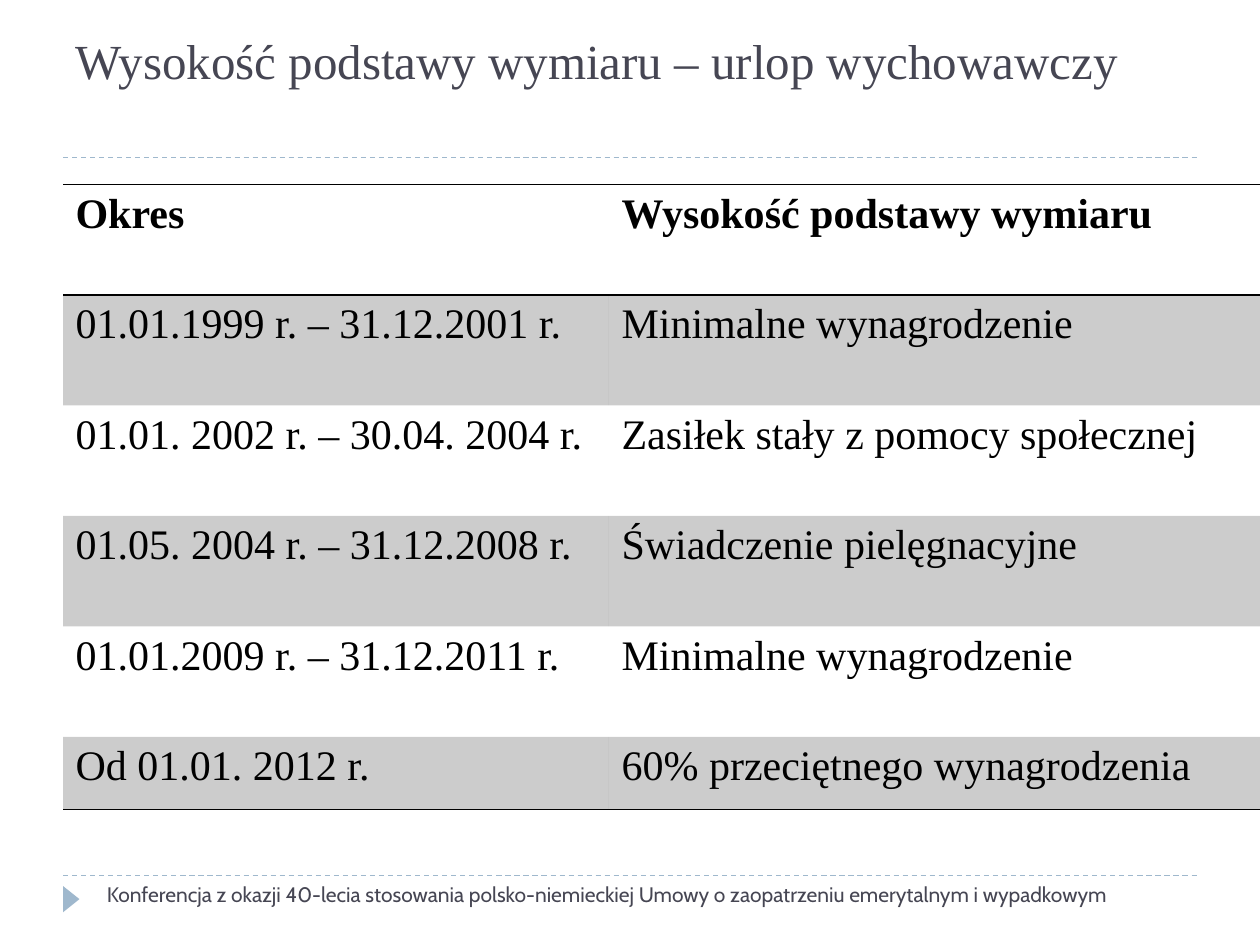
from dataclasses import dataclass

from lxml import etree
from pptx import Presentation
from pptx.dml.color import RGBColor
from pptx.enum import dml, shapes, text
from pptx.oxml import ns
from pptx.util import Pt


@dataclass(frozen=True)
class Theme:
    """Colours, fonts and type sizes of the slide."""
    ink: str = "000000"
    muted: str = "464653"
    accent: str = "9FB8CD"
    serif: str = "Times New Roman"
    sans: str = "Cabin"
    title: int = 28
    body: int = 24
    footer: int = 12
    band_alpha: int = 20


T = Theme()
ROWS = [
    ("Okres", "Wysokość podstawy wymiaru"),
    ("01.01.1999 r. – 31.12.2001 r.", "Minimalne wynagrodzenie"),
    ("01.01. 2002 r. – 30.04. 2004 r.", "Zasiłek stały z pomocy społecznej"),
    ("01.05. 2004 r. – 31.12.2008 r.", "Świadczenie pielęgnacyjne"),
    ("01.01.2009 r. – 31.12.2011 r.", "Minimalne wynagrodzenie"),
    ("Od 01.01. 2012 r.", "60% przeciętnego wynagrodzenia"),
]
NO_STYLE = "{2D5ABB26-0587-4C30-8999-92F81FD0307C}"


def write(tf, content, size, color, font, bold=False):
    """Put one formatted, left-aligned paragraph into a text frame."""
    p = tf.paragraphs[0]
    p.alignment = text.PP_ALIGN.LEFT
    r = p.add_run()
    r.text = content
    r.font.size = Pt(size)
    r.font.name = font
    r.font.bold = bold
    r.font.color.rgb = RGBColor.from_string(color)


def add_rule(s, x, y, w):
    """Draw a dashed horizontal rule."""
    line = s.shapes.add_connector(
        shapes.MSO_CONNECTOR.STRAIGHT, Pt(x), Pt(y), Pt(x + w), Pt(y))
    line.line.color.rgb = RGBColor.from_string(T.accent)
    line.line.width = Pt(0.75)
    line.line.dash_style = dml.MSO_LINE.DASH
    etree.SubElement(line._element.spPr, ns.qn("a:effectLst"))


def add_title(s, content, x, y, w, h):
    """Place the title and the rule below it."""
    sp = s.shapes.title
    sp.left, sp.top, sp.width, sp.height = Pt(x), Pt(y), Pt(w), Pt(h)
    tf = sp.text_frame
    tf.word_wrap = True
    tf.auto_size = text.MSO_AUTO_SIZE.NONE
    tf.vertical_anchor = text.MSO_ANCHOR.BOTTOM
    write(tf, content, T.title, T.muted, T.serif)
    add_rule(s, x, 90, w)


def add_border(cell, side):
    """Draw a solid border on one side of a cell."""
    ln = etree.SubElement(cell._tc.get_or_add_tcPr(), ns.qn(f"a:ln{side}"),
                          w=str(Pt(1)))
    fill = etree.SubElement(ln, ns.qn("a:solidFill"))
    etree.SubElement(fill, ns.qn("a:srgbClr"), val=T.ink)


def fill_band(cell, banded):
    """Tint a banded cell and leave the others clear."""
    if not banded:
        cell.fill.background()
        return
    cell.fill.solid()
    cell.fill.fore_color.rgb = RGBColor.from_string(T.ink)
    color = cell._tc.tcPr.find(".//" + ns.qn("a:solidFill") + "[last()]/"
                               + ns.qn("a:srgbClr")) \
        if cell._tc.tcPr.find(ns.qn("a:lnB")) is None \
        else cell._tc.tcPr.find(ns.qn("a:solidFill"))[0]
    etree.SubElement(color, ns.qn("a:alpha"), val=str(T.band_alpha * 1000))


def add_periods(s, rows, x, y, w, h):
    """Build the banded table of periods and assessment bases."""
    last = len(rows) - 1
    table = s.shapes.add_table(
        len(rows), 2, Pt(x), Pt(y), Pt(w), Pt(h)).table
    table._tbl.tblPr.find(ns.qn("a:tableStyleId")).text = NO_STYLE
    table.horz_banding = False
    first_w, row_h = 312, 63.1
    table.columns[0].width = Pt(first_w)
    table.columns[1].width = Pt(w - first_w)
    for i, row in enumerate(rows):
        table.rows[i].height = Pt(row_h if i < last else h - last * row_h)
        sides = {0: "TB", last: "B"}.get(i, "")
        for j, content in enumerate(row):
            cell = table.cell(i, j)
            write(cell.text_frame, content, T.body, T.ink, T.serif,
                  bold=i == 0)
            for side in sides:
                add_border(cell, side)
            fill_band(cell, i % 2 == 1)


def add_footer(s, content, x, y, w, h):
    """Place the footer rule, its arrow marker and the text."""
    add_rule(s, x, y, w)
    arrow_w, arrow_h = 15, 9.4
    sp = s.shapes.add_shape(
        shapes.MSO_SHAPE.ISOSCELES_TRIANGLE,
        Pt(x - (arrow_w - arrow_h) / 2), Pt(y + 8.7), Pt(arrow_w), Pt(arrow_h))
    sp.rotation = 90
    sp.shadow.inherit = False
    sp.fill.solid()
    sp.fill.fore_color.rgb = RGBColor.from_string(T.accent)
    sp.line.fill.background()
    indent = 18
    tf = s.shapes.add_textbox(
        Pt(x + indent), Pt(y), Pt(w - indent), Pt(h)).text_frame
    tf.word_wrap = True
    write(tf, content, T.footer, T.muted, T.sans)


def main():
    """Build and save the slide."""
    prs = Presentation()
    prs.slide_width, prs.slide_height = Pt(720), Pt(540)
    s = prs.slides.add_slide(prs.slide_layouts[5])
    add_title(s, "Wysokość podstawy wymiaru – urlop wychowawczy",
              36, 12.2, 648, 42.5)
    add_periods(s, ROWS, 36, 105.5, 684, 357)
    add_footer(s, "Konferencja z okazji 40-lecia stosowania polsko-niemieckiej "
               "Umowy o zaopatrzeniu emerytalnym i wypadkowym",
               36, 500.4, 648, 29)
    prs.save("out.pptx")


if __name__ == "__main__":
    main()
